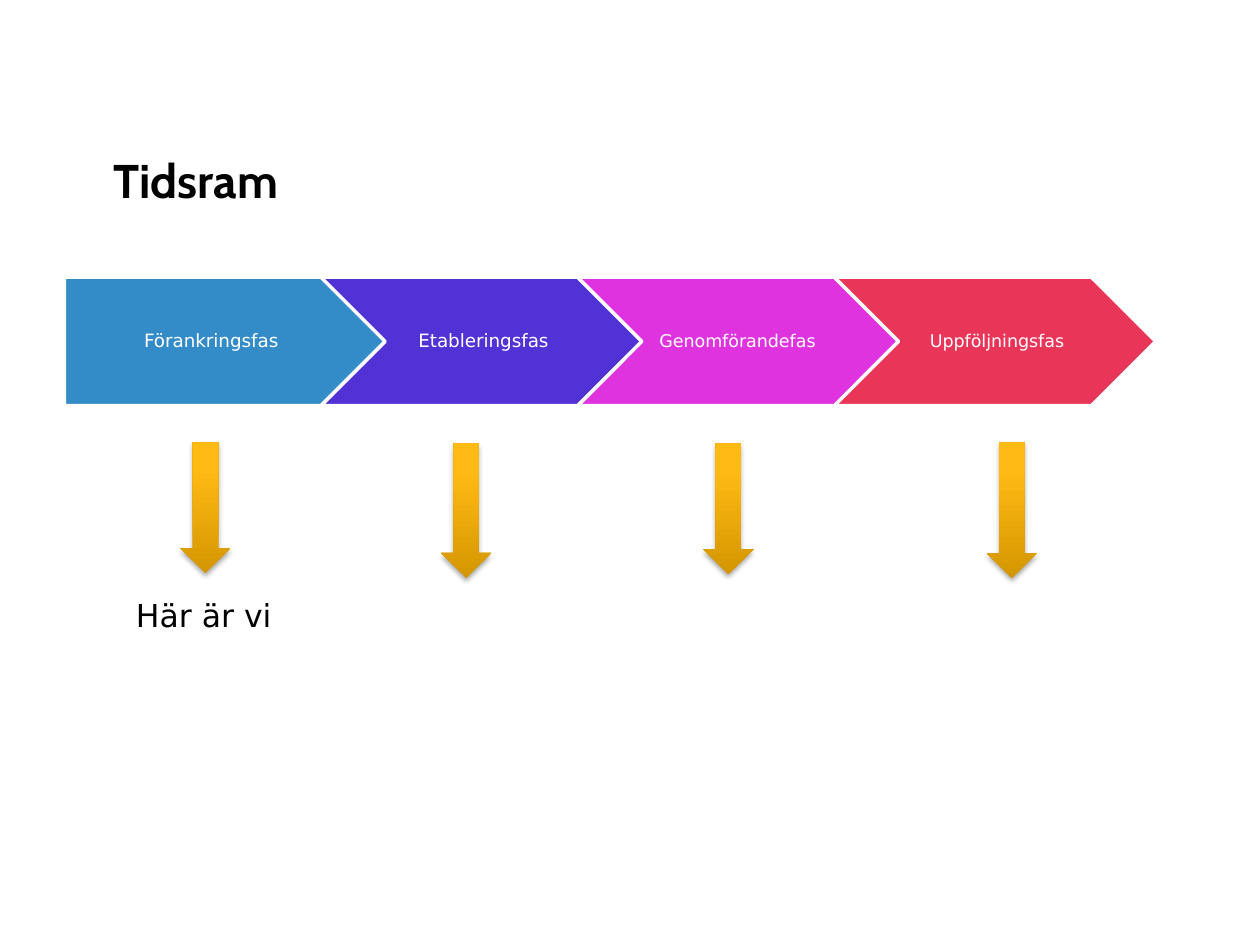
import pptx
import pptx.util
import pptx.dml.color
import pptx.enum.shapes
import pptx.enum.text
import pptx.oxml
from pptx.util import Pt

RGBColor = pptx.dml.color.RGBColor
SHAPE = pptx.enum.shapes.MSO_SHAPE
ALIGN = pptx.enum.text.PP_ALIGN
ANCHOR = pptx.enum.text.MSO_ANCHOR
FIT = pptx.enum.text.MSO_AUTO_SIZE

WHITE = RGBColor(0xFF, 0xFF, 0xFF)
BLACK = RGBColor(0, 0, 0)
BLUE = RGBColor(0x33, 0x8C, 0xC7)
INDIGO = RGBColor(0x52, 0x31, 0xD5)
MAGENTA = RGBColor(0xDF, 0x33, 0xDF)
RED = RGBColor(0xE9, 0x35, 0x58)
GOLD = RGBColor(0xFF, 0xBA, 0x14)
DARK_GOLD = RGBColor(0xD4, 0x96, 0x00)

SHADOW = (
    '<a:outerShdw xmlns:a="http://schemas.openxmlformats.org/drawingml/2006/main"'
    ' blurRad="39370" dist="22860" dir="5400000" rotWithShape="0">'
    '<a:srgbClr val="000000"><a:alpha val="35000"/></a:srgbClr></a:outerShdw>'
)


def write(tf, text, size, color, font="DejaVu Sans", bold=False,
          align=ALIGN.CENTER, spacing=1.0):
    p = tf.paragraphs[0]
    p.alignment = align
    p.line_spacing = spacing
    r = p.add_run()
    r.text = text
    r.font.name = font
    r.font.size = Pt(size)
    r.font.bold = bold
    r.font.color.rgb = color


prs = pptx.Presentation()
prs.slide_width, prs.slide_height = Pt(720), Pt(540)
slide = prs.slides.add_slide(prs.slide_layouts[5])

# Title
title = slide.shapes.title
title.left, title.top, title.width, title.height = Pt(50.4), Pt(82.8), Pt(123.1), Pt(40.3)
tf = title.text_frame
tf.auto_size = FIT.SHAPE_TO_FIT_TEXT
tf.vertical_anchor = ANCHOR.TOP
write(tf, "Tidsram", 27, BLACK, font="Cabin", bold=True)

# Phases: text, size, fill, left and right inset
phases = [
    ("Förankringsfas", 10.5, BLUE, 4.2, 1.4),
    ("Etableringsfas", 10.5, INDIGO, 3.6, 1.4),
    ("Genomförandefas ", 10, MAGENTA, 2.9, 0.7),
    ("Uppföljningsfas", 10, RED, 2.9, 0.7),
]
for i, (text, size, color, left, right) in enumerate(phases):
    kind = SHAPE.CHEVRON if i else SHAPE.PENTAGON
    s = slide.shapes.add_shape(kind, Pt(36.7 + 146.7 * i), Pt(158.4), Pt(183.6), Pt(73.4))
    s.shadow.inherit = False
    s.fill.solid()
    s.fill.fore_color.rgb = color
    s.line.color.rgb = WHITE
    s.line.width = Pt(2)
    tf = s.text_frame
    tf.word_wrap = True
    tf.vertical_anchor = ANCHOR.MIDDLE
    tf.margin_left, tf.margin_right = Pt(left), Pt(right)
    tf.margin_top = tf.margin_bottom = Pt(2)
    write(tf, text, size, WHITE, spacing=0.9)

# Arrows below the phases: left, top, height
arrows = [(103, 252.7, 74.9), (252, 253.4, 77), (401.8, 253.4, 74.9), (563.8, 252.7, 77.8)]
for left, top, height in arrows:
    s = slide.shapes.add_shape(SHAPE.DOWN_ARROW, Pt(left), Pt(top), Pt(28.8), Pt(height))
    s.fill.gradient()
    s.fill.gradient_angle = 90
    for stop, color, position in zip(s.fill.gradient_stops, (DARK_GOLD, GOLD), (0, 0.8)):
        stop.color.rgb = color
        stop.position = position
    s.line.fill.background()
    s.shadow.inherit = False
    effects = s.element.spPr.find(pptx.oxml.ns.qn("a:effectLst"))
    effects.append(pptx.oxml.parse_xml(SHADOW))

# Current position
s = slide.shapes.add_textbox(Pt(70.6), Pt(337), Pt(100.1), Pt(28.8))
tf = s.text_frame
tf.word_wrap = False
tf.auto_size = FIT.SHAPE_TO_FIT_TEXT
write(tf, "Här är vi", 18, BLACK, align=ALIGN.LEFT)

prs.save("out.pptx")
